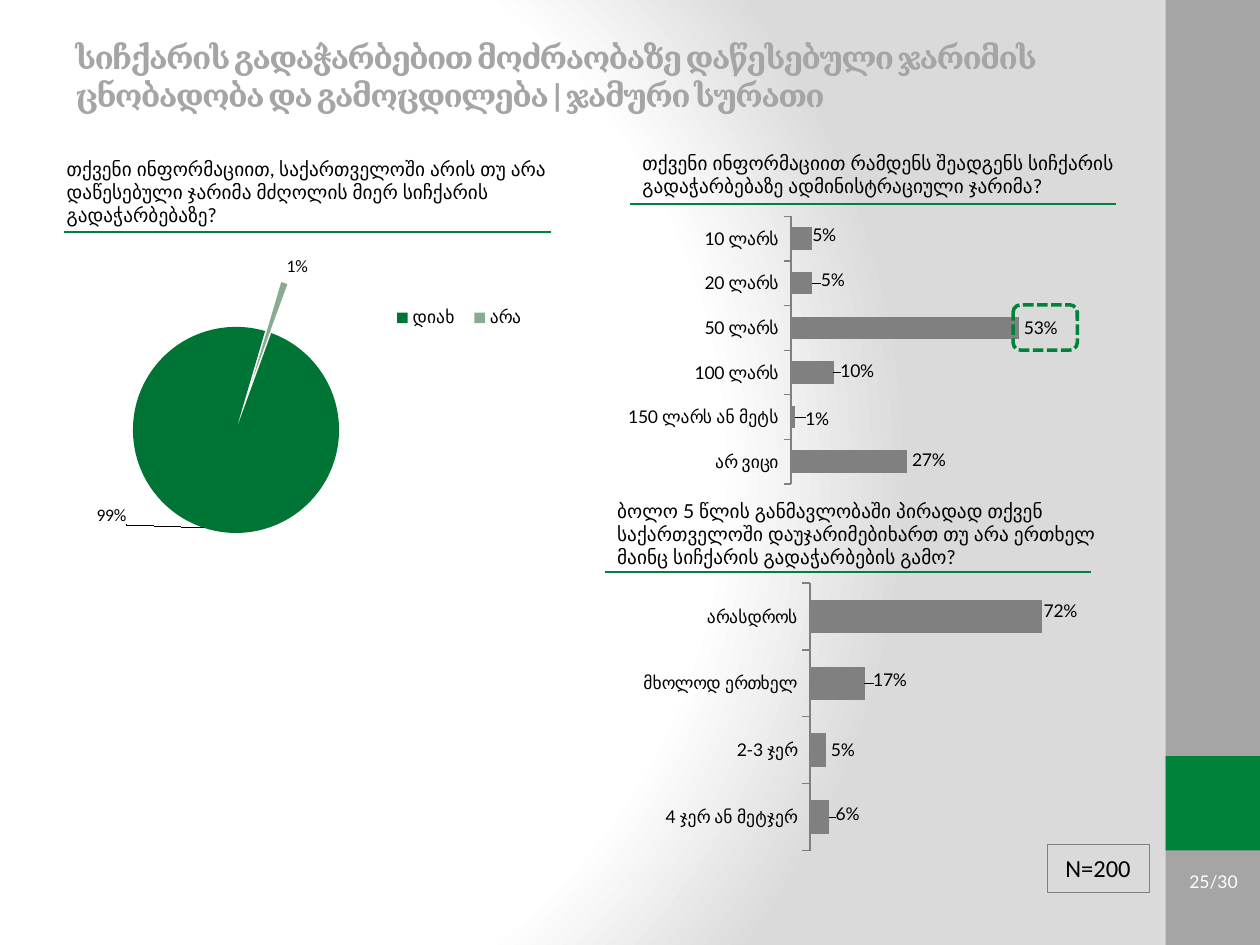
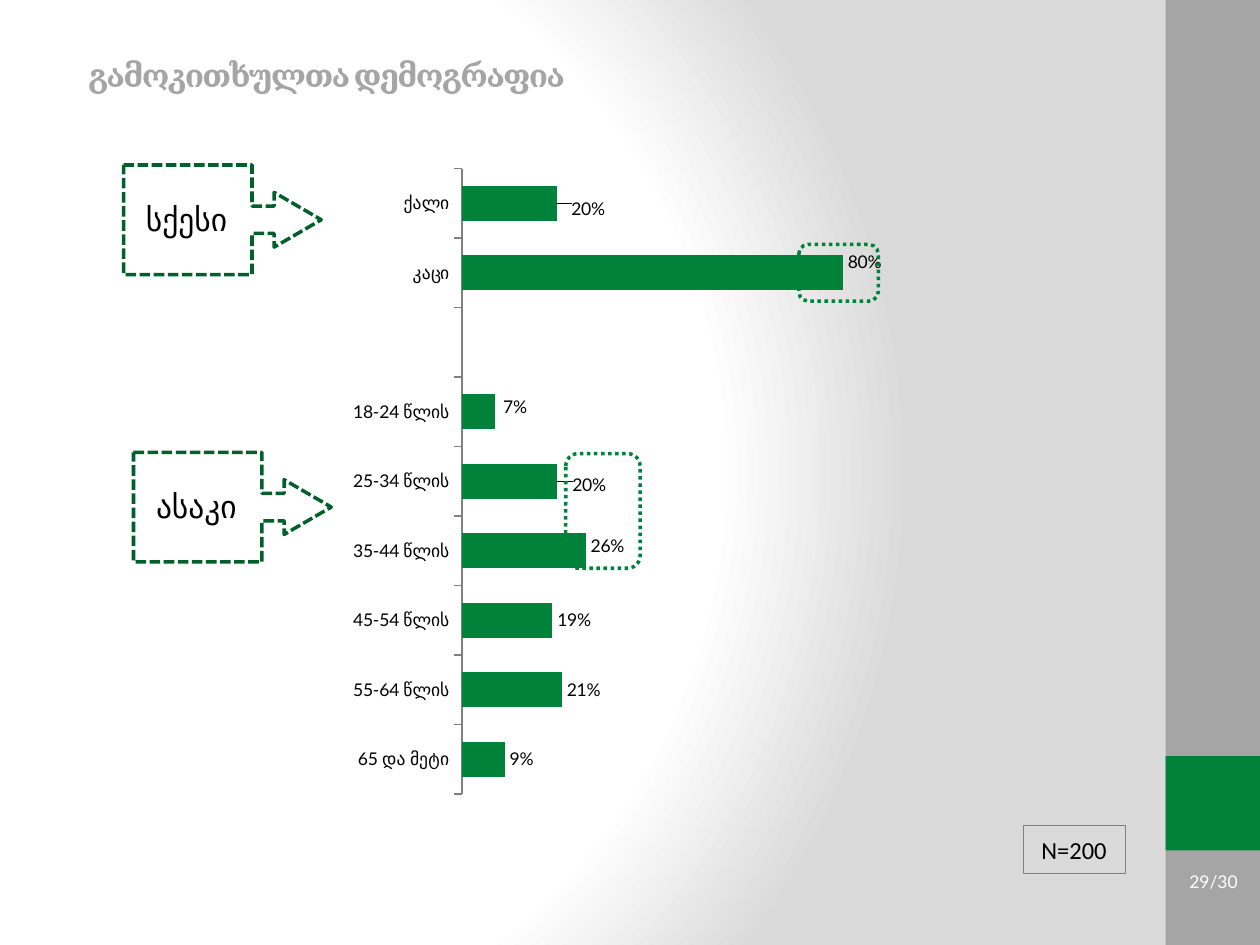
from lxml import etree
from pptx import Presentation
from pptx.chart.data import CategoryChartData
from pptx.dml.color import RGBColor
from pptx.enum.chart import (XL_CHART_TYPE, XL_LABEL_POSITION,
                             XL_LEGEND_POSITION, XL_TICK_MARK)
from pptx.enum.dml import MSO_LINE
from pptx.enum.shapes import MSO_CONNECTOR, MSO_SHAPE
from pptx.enum.text import MSO_ANCHOR, PP_ALIGN
from pptx.oxml import parse_xml
from pptx.oxml.ns import nsdecls, qn
from pptx.util import Pt

PIE, BAR = XL_CHART_TYPE.PIE, XL_CHART_TYPE.BAR_CLUSTERED
OUT_END = XL_LABEL_POSITION.OUTSIDE_END
TOP, OUTSIDE = XL_LEGEND_POSITION.TOP, XL_TICK_MARK.OUTSIDE
NO_TICK = XL_TICK_MARK.NONE
DASH, DOT = MSO_LINE.SQUARE_DOT, MSO_LINE.ROUND_DOT
RECT, ROUND = MSO_SHAPE.RECTANGLE, MSO_SHAPE.ROUNDED_RECTANGLE
CALLOUT = MSO_SHAPE.RIGHT_ARROW_CALLOUT
LINE = MSO_CONNECTOR.STRAIGHT
MIDDLE, UPPER = MSO_ANCHOR.MIDDLE, MSO_ANCHOR.TOP
LEFT, CENTER, RIGHT = PP_ALIGN.LEFT, PP_ALIGN.CENTER, PP_ALIGN.RIGHT

GREEN = RGBColor(0x00, 0x82, 0x3B)
DEEP = RGBColor(0x00, 0x60, 0x2C)
FOREST = RGBColor(0x00, 0x74, 0x35)
SAGE = RGBColor(0x8A, 0xAB, 0x91)
SILVER = RGBColor(0xA5, 0xA5, 0xA5)
GRAY = RGBColor(0x80, 0x80, 0x80)
BLACK = RGBColor(0, 0, 0)
WHITE = RGBColor(0xFF, 0xFF, 0xFF)

BACK = f"""<a:gradFill {nsdecls('a')} rotWithShape="1"><a:gsLst>
<a:gs pos="0"><a:srgbClr val="FFFFFF"/></a:gs>
<a:gs pos="75000"><a:srgbClr val="FFFFFF"/></a:gs>
<a:gs pos="100000"><a:srgbClr val="DADADA"/></a:gs></a:gsLst>
<a:path path="circle"><a:fillToRect l="20000" t="50000" r="100000" b="50000"/>
</a:path></a:gradFill>"""
CLEAR = f"""<c:spPr {nsdecls('c', 'a')}><a:noFill/><a:ln><a:noFill/></a:ln></c:spPr>"""


def write(shape, text, font, size, color=BLACK, align=LEFT, anchor=UPPER):
    frame = shape.text_frame
    frame.word_wrap = True
    frame.vertical_anchor = anchor
    para = frame.paragraphs[0]
    para.text = text
    para.alignment = align
    para.font.name, para.font.size = font, Pt(size)
    para.font.color.rgb = color
    return para


def place(parent, index, **parts):
    """Give a chart part a manual layout, as shares of the chart size."""
    for old in parent.findall(qn("c:layout")):
        parent.remove(old)
    layout = etree.Element(qn("c:layout"))
    manual = etree.SubElement(layout, qn("c:manualLayout"))
    for key, val in parts.items():
        etree.SubElement(manual, qn("c:" + key)).set("val", str(val))
    parent.insert(index, layout)


prs = Presentation()
prs.slide_width, prs.slide_height = Pt(720), Pt(540)

# Shared frame: background, side bands, page number, title, sample size
pages = [
    ("სიჩქარის გადაჭარბებით მოძრაობაზე დაწესებული ჯარიმის ცნობადობა და "
     "გამოცდილება | ჯამური სურათი", 36, 21.6, "25/30", 598.3, 482.4),
    ("გამოკითხულთა დემოგრაფია", 43.2, 20.9, "29/30", 584.6, 471.6),
]
slides = []
for title, left, top, page, n_left, n_top in pages:
    slide = prs.slides.add_slide(prs.slide_layouts[6])
    slides.append(slide)
    slide.background.fill.gradient()
    grad = slide.element.find(".//" + qn("a:gradFill"))
    grad.getparent().replace(grad, parse_xml(BACK))
    for y, height, color in ((0, 540, SILVER), (432, 54, GREEN)):
        band = slide.shapes.add_shape(RECT, Pt(666), Pt(y), Pt(54), Pt(height))
        band.shadow.inherit = False
        band.fill.solid()
        band.fill.fore_color.rgb = color
        band.line.fill.background()
    box = slide.shapes.add_textbox(Pt(671.8), Pt(488.9), Pt(42.5), Pt(30.2))
    write(box, page, "Lato", 10, WHITE, RIGHT, MIDDLE)
    box.text_frame.word_wrap = False
    box = slide.shapes.add_textbox(Pt(left), Pt(top), Pt(600), Pt(44))
    para = write(box, title, "Cambria", 18, SILVER, LEFT, MIDDLE)
    para.font.bold = True
    para.runs[0].font._element.set("spc", "-100")
    box = slide.shapes.add_shape(RECT, Pt(n_left), Pt(n_top), Pt(58.3), Pt(27.4))
    box.shadow.inherit = False
    box.fill.background()
    box.line.color.rgb, box.line.width = GRAY, Pt(0.5)
    write(box, "N=200", "Calibri", 14, BLACK, CENTER, MIDDLE)
    box.text_frame.word_wrap = False
fines, people = slides

# Charts: slide, kind, box, plot area, colours, axis top, data, label shifts (pt)
NARROW, WIDE = (0.36, 0.03, 0.51, 0.94), (0.36, 0.03, 0.42, 0.94)
charts = [
    (fines, PIE, (25.2, 88.6, 289.4, 277.9), (0.14, 0.25, 0.51, 0.53),
     (FOREST, SAGE), None,
     (("დიახ", 0.99), ("არა", 0.01)), {0: (-43, -17)}),
    (fines, BAR, (347.8, 118.8, 289.4, 162.7), NARROW, (GRAY,), 0.6,
     (("10 ლარს", 0.05), ("20 ლარს", 0.05), ("50 ლარს", 0.53),
      ("100 ლარს", 0.1), ("150 ლარს ან მეტს", 0.01), ("არ ვიცი", 0.27)),
     {0: (-3, -2), 1: (2, -2), 3: (1, -1), 4: (3, 1), 5: (0, -1)}),
    (fines, BAR, (358.6, 328.3, 289.4, 162.7), NARROW, (GRAY,), 0.8,
     (("არასდროს", 0.72), ("მხოლოდ ერთხელ", 0.17), ("2-3 ჯერ", 0.05),
      ("4 ჯერ ან მეტჯერ", 0.06)),
     {0: (-2, -3), 1: (2, -2), 3: (1, -2)}),
    (people, BAR, (54, 85, 583.2, 380.2), WIDE, (GREEN,), 0.9,
     (("ქალი", 0.2), ("კაცი", 0.8), ("", None), ("18-24 წლის", 0.07),
      ("25-34 წლის", 0.2), ("35-44 წლის", 0.26), ("45-54 წლის", 0.19),
      ("55-64 წლის", 0.21), ("65 და მეტი", 0.09)),
     {0: (5, 3), 1: (0, -6), 3: (2, -3), 4: (6, 2), 5: (0, -3)}),
]
for slide, kind, area, inner, colors, peak, rows, shifts in charts:
    data = CategoryChartData(number_format="0%")
    data.categories = [name for name, _ in rows]
    data.add_series("Series 1", [val for _, val in rows])
    chart = slide.shapes.add_chart(kind, *map(Pt, area), data).chart
    font = "Calibri" if kind == PIE else "Lato"
    chart.has_title = False
    chart.font.name, chart.font.size = font, Pt(10)
    chart.font.color.rgb = BLACK
    space = chart.element
    space.find(qn("c:chart")).addnext(parse_xml(CLEAR))
    field = space.find(".//" + qn("c:plotArea"))
    field.append(parse_xml(CLEAR))
    x, y, w, h = inner
    place(field, 0, layoutTarget="inner", xMode="edge", yMode="edge",
          x=x, y=y, w=w, h=h)

    plot = chart.plots[0]
    series = plot.series[0]
    plot.vary_by_categories = kind == PIE
    plot.has_data_labels = True
    labels = [plot.data_labels, series.data_labels]
    labels += [series.points[i].data_label for i in shifts]
    for label in labels:
        label.position = OUT_END
        label.font.name, label.font.size = font, Pt(10)
        label.font.color.rgb = BLACK
    for label in labels[:2]:
        label.show_value = True
        label.number_format, label.number_format_is_linked = "0%", False
    for mark in space.iter(qn("c:dLbl")):
        dx, dy = shifts[int(mark.find(qn("c:idx")).get("val"))]
        place(mark, 1, x=round(dx / area[2], 3), y=round(dy / area[3], 3))

    if kind == PIE:
        for i, color in enumerate(colors):
            fill = series.points[i].format.fill
            fill.solid()
            fill.fore_color.rgb = color
        burst = etree.Element(qn("c:explosion"), val="25")
        space.find(".//" + qn("c:dPt")).addprevious(burst)
        pie = space.find(".//" + qn("c:pieChart"))
        for old in pie.findall(qn("c:firstSliceAng")):
            pie.remove(old)
        etree.SubElement(pie, qn("c:firstSliceAng")).set("val", "20")
        chart.has_legend = True
        chart.legend.position = TOP
        chart.legend.include_in_layout = False
        chart.legend.font.name, chart.legend.font.size = font, Pt(10)
        place(space.find(".//" + qn("c:legend")), 1, xMode="edge", yMode="edge",
              x=0.67, y=0.3, w=0.3, h=0.07)
    else:
        plot.gap_width = 100
        series.format.fill.solid()
        series.format.fill.fore_color.rgb = colors[0]
        axis = chart.category_axis
        axis.reverse_order = True
        axis.major_tick_mark, axis.minor_tick_mark = OUTSIDE, NO_TICK
        axis.tick_labels.font.size = Pt(10)
        axis.format.line.color.rgb = GRAY
        scale = chart.value_axis
        scale.visible = scale.has_major_gridlines = False
        scale.minimum_scale, scale.maximum_scale = 0, peak

# Questions, each with a rule below
asks = [
    ("თქვენი ინფორმაციით, საქართველოში არის თუ არა დაწესებული ჯარიმა "
     "მძღოლის მიერ სიჩქარის გადაჭარბებაზე?", 31, 86.4, 314, 36.7, 132.5),
    ("თქვენი ინფორმაციით რამდენს შეადგენს სიჩქარის გადაჭარბებაზე "
     "ადმინისტრაციული ჯარიმა?", 360, 82.8, 294.5, 360, 116.6),
    ("ბოლო 5 წლის განმავლობაში პირადად თქვენ საქართველოში "
     "დაუჯარიმებიხართ თუ არა ერთხელ მაინც სიჩქარის გადაჭარბების გამო?",
     345.6, 281.5, 294.5, 345.6, 326.9),
]
for text, left, top, width, start, y in asks:
    box = fines.shapes.add_textbox(Pt(left), Pt(top), Pt(width), Pt(y - top))
    write(box, text, "Lato", 11)
    rule = fines.shapes.add_connector(LINE, Pt(start), Pt(y), Pt(start + 278), Pt(y))
    rule.line.color.rgb, rule.line.width = GREEN, Pt(1)
    etree.SubElement(rule._element.spPr, qn("a:effectLst"))

# Dashed outlines around key values, and the group callouts
marks = [
    (fines, ROUND, (578.9, 174.2, 36.7, 25.9), GREEN, DASH),
    (people, ROUND, (323.3, 259.2, 42.5, 65.5), GREEN, DOT),
    (people, ROUND, (456.5, 139.7, 45.4, 32.4), GREEN, DOT),
    (people, CALLOUT, (70.6, 94.3, 113, 62.6), DEEP, DASH),
    (people, CALLOUT, (76.3, 258.5, 113, 62.6), DEEP, DASH),
]
for slide, kind, area, color, dash in marks:
    mark = slide.shapes.add_shape(kind, *map(Pt, area))
    mark.shadow.inherit = False
    mark.fill.background()
    mark.line.color.rgb, mark.line.width = color, Pt(2)
    mark.line.dash_style = dash
    if kind == CALLOUT:
        for i, val in enumerate((0.25, 0.25, 0.43, 0.65)):
            mark.adjustments[i] = val

for text, left, top in (("სქესი", 76.3, 110.9), ("ასაკი", 82.1, 275)):
    box = people.shapes.add_textbox(Pt(left), Pt(top), Pt(96.5), Pt(28.8))
    write(box, text, "Calibri", 18)

prs.save("out.pptx")
